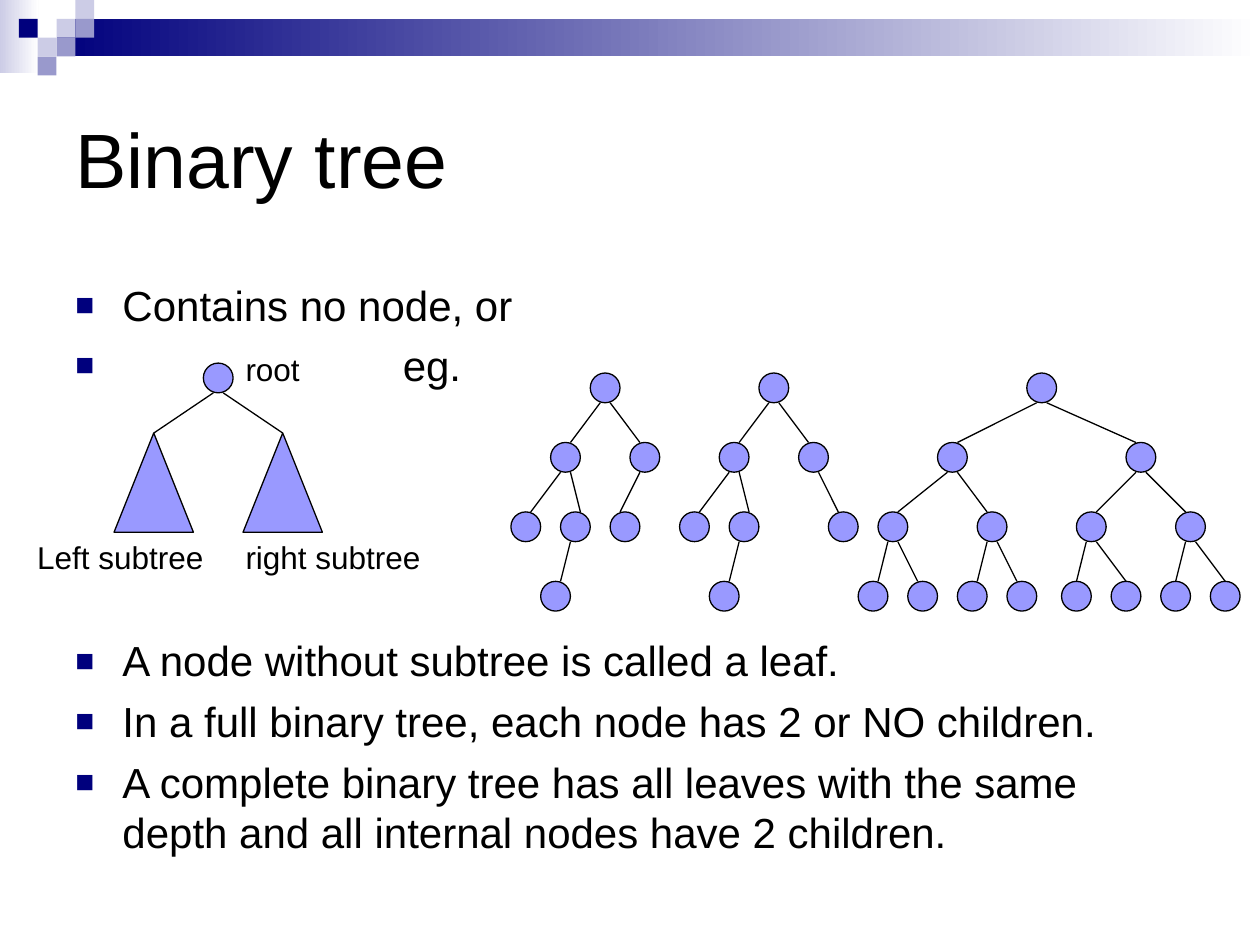
from dataclasses import dataclass
from typing import Optional

from lxml.etree import SubElement
from pptx import Presentation
from pptx.dml.color import RGBColor
from pptx.enum.shapes import MSO_CONNECTOR as Link, MSO_SHAPE as Shape
from pptx.enum.text import MSO_ANCHOR as Anchor
from pptx.oxml.ns import qn
from pptx.util import Cm, Pt

BLACK = RGBColor(0x00, 0x00, 0x00)
WHITE = RGBColor(0xFF, 0xFF, 0xFF)
NAVY = RGBColor(0x00, 0x00, 0x7D)
PALE = RGBColor(0xCC, 0xCC, 0xE6)
MIDDLE = RGBColor(0x99, 0x99, 0xCC)
NODE_BLUE = RGBColor(0x99, 0x99, 0xFF)

FONT = "Arial"
TILE = 0.38
DIAMETER = 0.6
LEVEL_STEP = 1.4
TREE_TOP = 7.52
SPREAD = 0.1
OUTLINE = Pt(0.75)

MOSAIC = [
    (3, 1, PALE), (4, 0, PALE), (4, 1, MIDDLE), (2, 2, PALE),
    (1, 1, NAVY), (3, 2, MIDDLE), (2, 3, MIDDLE),
]
BULLETS = [
    ("Contains no node, or", 0.95, 5.8),
    ("eg.", 6.6, 5.8),
    ("A node without subtree is called a leaf.", 0.95, 140),
    ("In a full binary tree, each node has 2 or NO children.", 0.95, 5.8),
    ("A complete binary tree has all leaves with the same depth and all "
     "internal nodes have 2 children.", 0.95, 5.8),
]
LABELS = [
    ("root", 4.7, 6.93, 3.2),
    ("Left subtree", 0.5, 10.72, 4),
    ("right subtree", 4.7, 10.72, 4.4),
]


@dataclass
class Node:
    """A tree node: its centre, its children and how far its edge leans to the parent."""
    x: float
    left: Optional["Node"] = None
    right: Optional["Node"] = None
    lean: float = SPREAD


LEFT_BRANCH = Node(11.4, Node(10.6), Node(11.6, Node(11.2), lean=-SPREAD))
TREES = [
    (0, Node(12.2, LEFT_BRANCH, Node(13, Node(12.6, lean=-SPREAD)))),
    (3.4, Node(12.2, LEFT_BRANCH, Node(13, right=Node(13.6)))),
    (0, Node(21,
             Node(19.2, Node(18, Node(17.6), Node(18.6)),
                  Node(20, Node(19.6), Node(20.6))),
             Node(23, Node(22, Node(21.7, lean=0), Node(22.7, lean=0)),
                  Node(24, Node(23.7, lean=0), Node(24.7, lean=0))))),
]


def set_values(target, values):
    """Set attributes of an object from a dict."""
    for name, value in values.items():
        setattr(target, name, value)


def add_block(page, kind, left, top, width, height, colour):
    """Add a plain filled shape without an outline."""
    block = page.shapes.add_shape(kind, Cm(left), Cm(top), Cm(width), Cm(height))
    block.shadow.inherit = False
    block.fill.solid()
    block.fill.fore_color.rgb = colour
    block.line.fill.background()
    return block


def add_fade(page, left, top, width, height, colour):
    """Add a rectangle that fades from a colour to white."""
    block = add_block(page, Shape.RECTANGLE, left, top, width, height, colour)
    block.fill.gradient()
    block.fill.gradient_angle = 0
    for stop, shade in zip(block.fill.gradient_stops, (colour, WHITE)):
        stop.color.rgb = shade


def add_outlined(page, kind, centre, top, width, height):
    """Add a tree part with a thin black outline, centred on x."""
    part = add_block(page, kind, centre - width / 2, top, width, height, NODE_BLUE)
    part.line.color.rgb = BLACK
    part.line.width = OUTLINE


def add_edge(page, start_x, start_y, end_x, end_y):
    """Add a thin black line between two points."""
    edge = page.shapes.add_connector(
        Link.STRAIGHT, Cm(start_x), Cm(start_y), Cm(end_x), Cm(end_y))
    edge.line.color.rgb = BLACK
    edge.line.width = OUTLINE
    SubElement(edge._element.spPr, qn("a:effectLst"))


def add_tree(page, node, shift=0, top=TREE_TOP):
    """Draw a node, its edges and its subtrees."""
    centre = node.x + shift
    add_outlined(page, Shape.OVAL, centre, top, DIAMETER, DIAMETER)
    for side, child in ((-1, node.left), (1, node.right)):
        if child:
            add_edge(page, centre + side * SPREAD, top + DIAMETER,
                     child.x + shift - side * child.lean, top + LEVEL_STEP)
            add_tree(page, child, shift, top + LEVEL_STEP)


def add_box(page, left, top, width, height, anchor=Anchor.TOP):
    """Add an empty wrapping text box and return its frame."""
    box = page.shapes.add_textbox(Cm(left), Cm(top), Cm(width), Cm(height))
    set_values(box.text_frame, {"word_wrap": True, "vertical_anchor": anchor})
    return box.text_frame


def write(para, text, size):
    """Write one black span into a paragraph."""
    span = para.add_run()
    span.text = text
    set_values(span.font, {"name": FONT, "size": Pt(size)})
    span.font.color.rgb = BLACK


def add_bullet(para, indent):
    """Give a paragraph a navy square bullet and a hanging indent."""
    props = para._p.get_or_add_pPr()
    props.set("marL", str(Cm(indent)))
    props.set("indent", str(-Cm(indent)))
    colour = SubElement(props, qn("a:buClr"))
    SubElement(colour, qn("a:srgbClr"), val=str(NAVY))
    SubElement(props, qn("a:buSzPct"), val="75000")
    SubElement(props, qn("a:buFont"), typeface=FONT)
    SubElement(props, qn("a:buChar"), char="■")


def add_header(page):
    """Draw the fading bars and the mosaic of tiles."""
    add_fade(page, 0, 0, 0.78, 1.48, PALE)
    add_fade(page, 3 * TILE, TILE, 25.4 - 3 * TILE, 2 * TILE, NAVY)
    for column, row, colour in MOSAIC:
        add_block(page, Shape.RECTANGLE, column * TILE, row * TILE, TILE, TILE, colour)


def add_bullets(page):
    """Write the bulleted statements."""
    frame = add_box(page, 1.27, 5.5, 22.86, 12.2)
    for index, (text, indent, gap) in enumerate(BULLETS):
        para = frame.add_paragraph() if index else frame.paragraphs[0]
        para.space_before = Pt(gap)
        add_bullet(para, indent)
        write(para, text, 24)


def add_definition(page):
    """Draw the root with its two triangular subtrees and labels."""
    root_x, root_top, subtree_top = 4.4, 7.32, 8.73
    add_outlined(page, Shape.OVAL, root_x, root_top, DIAMETER, DIAMETER)
    for side in (-1, 1):
        subtree_x = root_x + side * 1.3
        add_outlined(page, Shape.ISOSCELES_TRIANGLE, subtree_x, subtree_top, 1.6, 2)
        add_edge(page, root_x + side * SPREAD, root_top + DIAMETER,
                 subtree_x, subtree_top)
    for text, left, top, width in LABELS:
        write(add_box(page, left, top, width, 1.02).paragraphs[0], text, 18)


def main():
    """Build the binary tree slide."""
    deck = Presentation()
    set_values(deck, {"slide_width": Cm(25.4), "slide_height": Cm(19.05)})
    page = deck.slides.add_slide(deck.slide_layouts[6])
    add_header(page)
    title = add_box(page, 1.27, 1.27, 22.86, 3.81, Anchor.MIDDLE)
    write(title.paragraphs[0], "Binary tree", 44)
    add_bullets(page)
    add_definition(page)
    for shift, root in TREES:
        add_tree(page, root, shift)
    deck.save("out.pptx")


if __name__ == "__main__":
    main()
